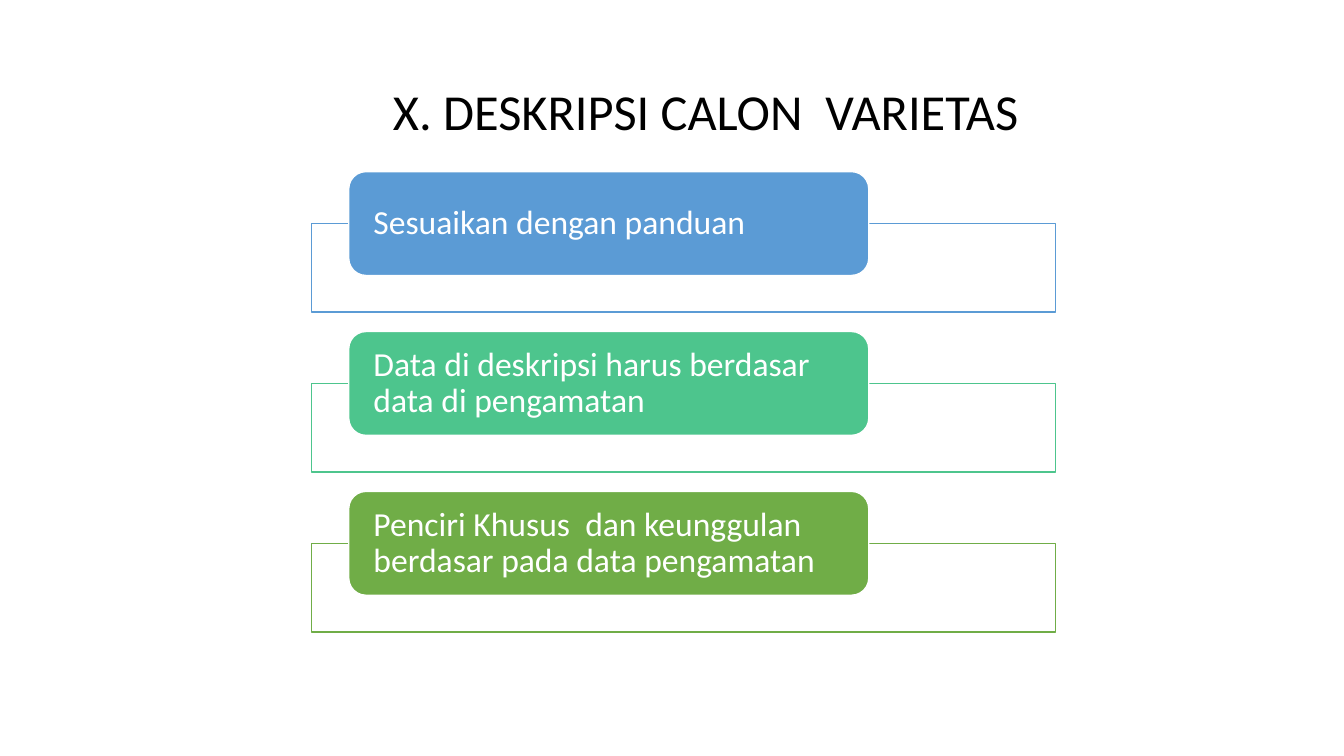
from lxml.etree import SubElement
from pptx import Presentation
from pptx.dml.color import RGBColor
from pptx.enum.shapes import MSO_SHAPE as Preset
from pptx.enum.text import MSO_ANCHOR as Anchor, PP_ALIGN as Align
from pptx.oxml.ns import qn
from pptx.util import Pt

WHITE = "FFFFFF"
POINTS = [
    ("Sesuaikan dengan panduan", "5B9BD5"),
    ("Data di deskripsi harus berdasar data di pengamatan", "4DC58D"),
    ("Penciri Khusus  dan keunggulan berdasar pada data pengamatan", "70AD47"),
]
FIRST_TOP, PITCH = 122.6, 114.2


def color(value):
    """Turn a hex string into a colour."""
    return RGBColor.from_string(value)


def write_text(box, text, size=24, ink=WHITE, anchor=Anchor.MIDDLE, spacing=0.9):
    """Fill a box with one left-aligned paragraph."""
    frame = box.text_frame
    frame.word_wrap = True
    frame.vertical_anchor = anchor
    para = frame.paragraphs[0]
    para.alignment = Align.LEFT
    para.line_spacing = spacing
    span = para.add_run()
    span.text = text
    span.font.name = "Calibri"
    span.font.size = Pt(size)
    span.font.color.rgb = color(ink)


def add_block(page, preset, left, top, width, height, fill, line):
    """Add a filled and outlined preset shape."""
    block = page.shapes.add_shape(preset, Pt(left), Pt(top), Pt(width), Pt(height))
    block.shadow.inherit = False
    block.fill.solid()
    block.fill.fore_color.rgb = color(fill)
    block.line.color.rgb = color(line)
    block.line.width = Pt(1)
    return block


def set_opacity(block, percent):
    """Make the solid fill of a block partly transparent."""
    tint = block.fill._xPr.find(qn("a:solidFill"))[0]
    SubElement(tint, qn("a:alpha")).set("val", str(percent * 1000))


def add_point(page, top, text, accent):
    """Add an outlined frame with a rounded label over its upper edge."""
    frame = add_block(page, Preset.RECTANGLE, 222.5, top + 37, 531.4, 63.4, WHITE, accent)
    set_opacity(frame, 90)
    label = add_block(page, Preset.ROUNDED_RECTANGLE, 249.1, top, 371.5, 74.2, accent, WHITE)
    label.text_frame.margin_left = label.text_frame.margin_right = Pt(14.1)
    label.text_frame.margin_top = label.text_frame.margin_bottom = Pt(0)
    write_text(label, text)


def main():
    """Build the slide and save it."""
    deck = Presentation()
    deck.slide_width, deck.slide_height = Pt(960), Pt(540)
    page = deck.slides.add_slide(deck.slide_layouts[6])
    title = page.shapes.add_textbox(Pt(273.6), Pt(54), Pt(480.2), Pt(51))
    write_text(title, "X. DESKRIPSI CALON  VARIETAS", size=36, ink="000000",
               anchor=Anchor.TOP, spacing=1.0)
    for index, (text, accent) in enumerate(POINTS):
        add_point(page, FIRST_TOP + index * PITCH, text, accent)
    deck.save("out.pptx")


if __name__ == "__main__":
    main()
